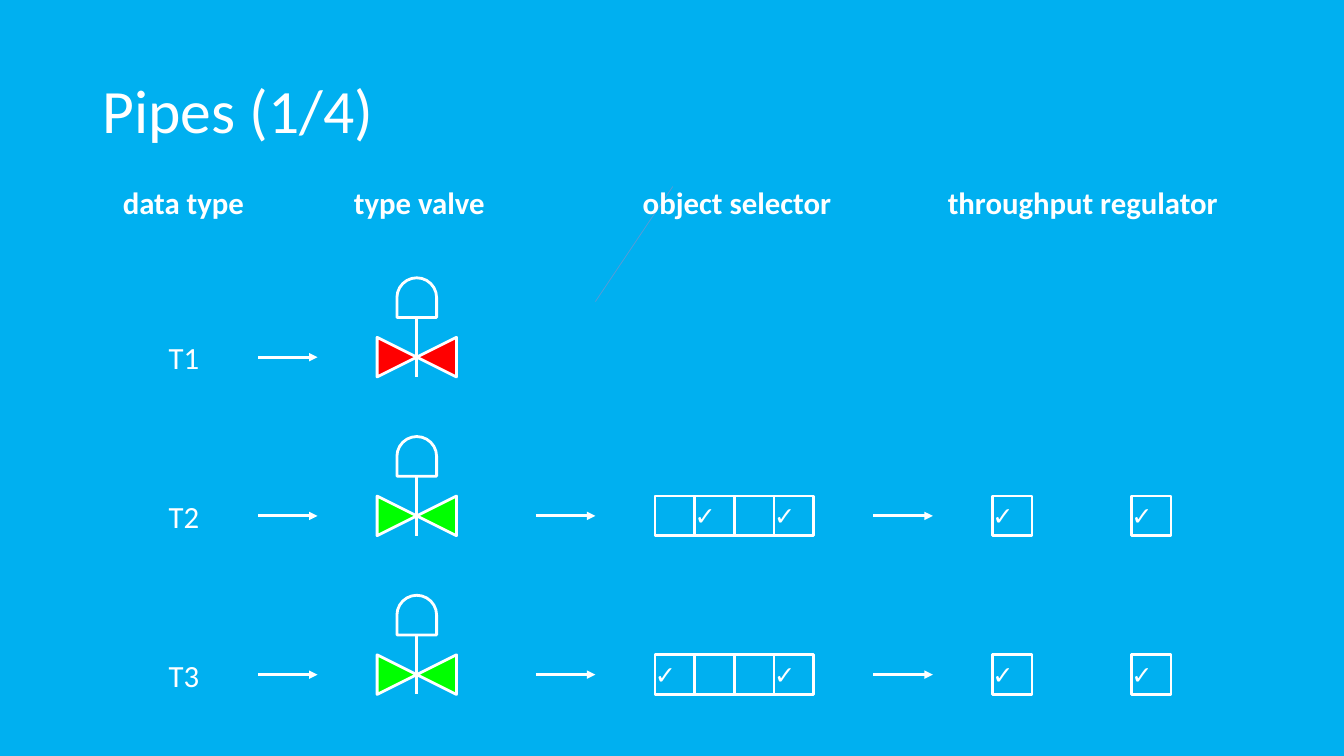
from lxml import etree
from pptx import Presentation, util as u
from pptx.dml.color import RGBColor
from pptx.enum import shapes, text
from pptx.oxml.ns import qn

TITLE = "Pipes (1/4)"
# heading, centre of its tab stop in inches from the text edge
HEADS = [("data type", 1.18), ("type valve", 3.52),
         ("object selector", 6.67), ("throughput regulator", 10.1)]
# type, valve colour, selector cells, regulator cells
PIPES = [
    ("T1", "FF0000", [], []),
    ("T2", "00FF00", ["", "✓", "", "✓"], ["✓", "✓"]),
    ("T3", "00FF00", ["✓", "", "", "✓"], ["✓", "✓"]),
]
WHITE, SKY, STEEL = "FFFFFF", "00B0F0", "5B9BD5"
FONT = "Calibri"

# The drawing sits on a grid of one-centimetre units
UNIT = 1 / 2.54
FIRST, PITCH = 9, 4
VALVE, SELECT, CONTROL, GAP = 10, 16.5, 25, 3.5
ARROWS, REACH = [6.5, 13.5, 22], 1.5

prs = Presentation()
prs.slide_width, prs.slide_height = u.Inches(13.33), u.Inches(7.5)
slide = prs.slides.add_slide(prs.slide_layouts[6])


def color(code):
    return RGBColor.from_string(code)


def grid(*units):
    return [u.Inches(n * UNIT) for n in units]


def style(par, size, bold=False):
    for run in par.runs:
        font = run.font
        font.name, font.size, font.bold = FONT, u.Pt(size), bold
        font.color.rgb = color(WHITE)


def label(box, words, size, bold=False, wrap=True):
    """Add a text box at box (inches) and return its frame."""
    frame = slide.shapes.add_textbox(*map(u.Inches, box)).text_frame
    frame.word_wrap = wrap
    frame.paragraphs[0].text = words
    style(frame.paragraphs[0], size, bold)
    return frame


def line(x1, y1, x2, y2, code=WHITE, width=2, arrow=False):
    """Draw a line between two grid points."""
    link = slide.shapes.add_connector(
        shapes.MSO_CONNECTOR.STRAIGHT, *grid(x1, y1, x2, y2))
    link.line.color.rgb, link.line.width = color(code), u.Pt(width)
    if arrow:
        tip = etree.SubElement(link.line._get_or_add_ln(), qn("a:tailEnd"))
        tip.set("type", "triangle")
    etree.SubElement(link._element.spPr, qn("a:effectLst"))


def shape(kind, x, y, high=1, fill=None, turn=0, mark=""):
    """Draw a white-edged shape, one unit wide, on the grid."""
    item = slide.shapes.add_shape(kind, *grid(x, y, 1, high))
    item.shadow.inherit = False
    item.rotation = turn
    item.line.color.rgb, item.line.width = color(WHITE), u.Pt(2)
    if fill:
        item.fill.solid()
        item.fill.fore_color.rgb = color(fill)
    else:
        item.fill.background()
    if mark:
        frame = item.text_frame
        frame.margin_left = frame.margin_right = 0
        frame.text = mark
        style(frame.paragraphs[0], 18)


def valve(y, fill):
    kind = shapes.MSO_SHAPE
    shape(kind.FLOWCHART_COLLATE, VALVE, y - 1, 2, fill, 90)
    line(VALVE + 0.5, y - 1, VALVE + 0.5, y + 0.5)
    shape(kind.FLOWCHART_DELAY, VALVE, y - 2, turn=270)


def cells(marks, x, y, step):
    for i, mark in enumerate(marks):
        shape(shapes.MSO_SHAPE.RECTANGLE, x + i * step, y - 0.5, mark=mark)


back = slide.background.fill
back.solid()
back.fore_color.rgb = color(SKY)

title = label((0.92, 0.4, 11.5, 1.45), TITLE, 44)
title.vertical_anchor = text.MSO_ANCHOR.MIDDLE
title.paragraphs[0].line_spacing = 0.9

line(15, 7.6, 16.95, 4.7, STEEL, 0.5)

head = label((0.54, 1.77, 12.32, 0.47),
             "".join("\t" + name for name, stop in HEADS), 22, True)
tabs = etree.SubElement(head.paragraphs[0]._p.get_or_add_pPr(), qn("a:tabLst"))
for name, stop in HEADS:
    etree.SubElement(tabs, qn("a:tab"), pos=str(u.Inches(stop)), algn="ctr")

for row, (name, fill, picks, rates) in enumerate(PIPES):
    y = FIRST + row * PITCH
    tag = label((1.57, y * UNIT - 0.23, 0.51, 0.47), name, 22, wrap=False)
    tag.paragraphs[0].alignment = text.PP_ALIGN.CENTER
    valve(y, fill)
    for x in ARROWS if picks else ARROWS[:1]:
        line(x, y, x + REACH, y, arrow=True)
    cells(picks, SELECT, y, 1)
    cells(rates, CONTROL, y, GAP)

prs.save("out.pptx")
